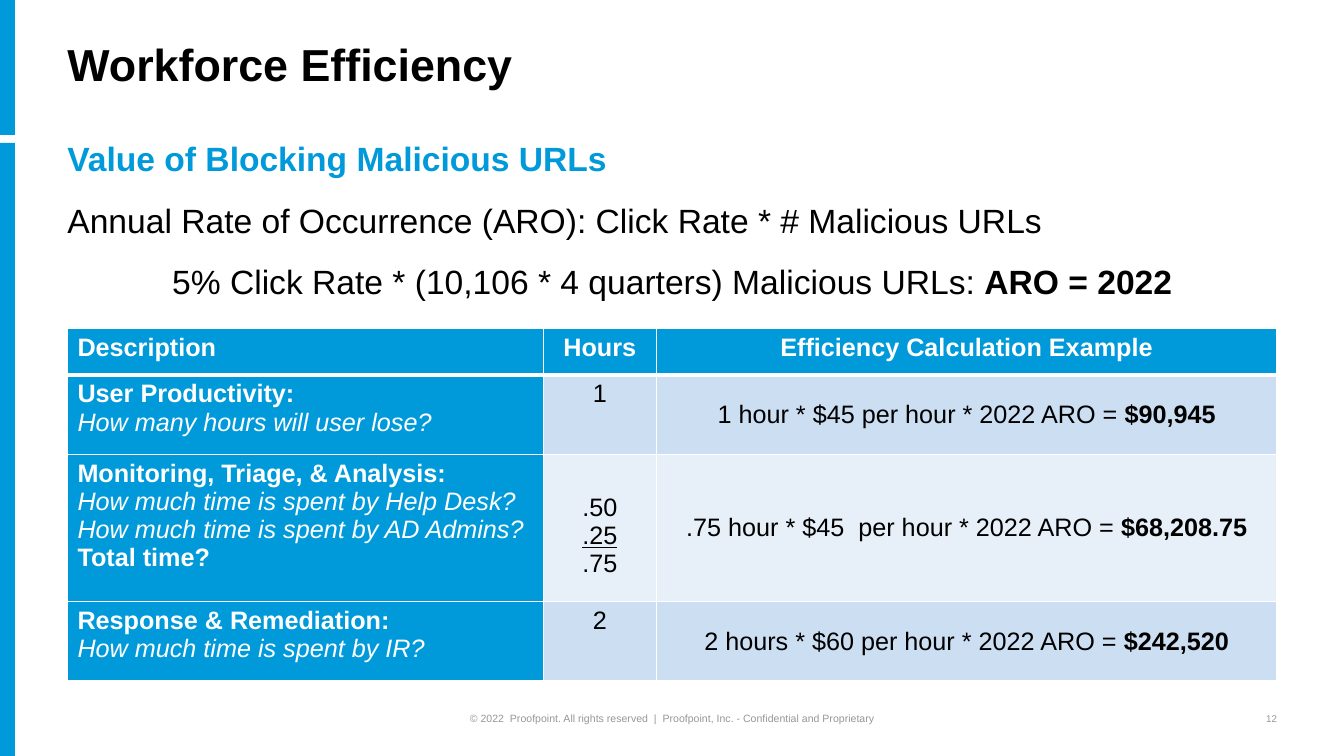
from lxml.etree import SubElement
from pptx import Presentation
from pptx.dml.color import RGBColor
from pptx.enum.shapes import MSO_SHAPE
from pptx.enum.text import MSO_ANCHOR as Anchor, PP_ALIGN as Align
from pptx.oxml.ns import qn
from pptx.util import Cm, Pt

BLUE = RGBColor(0x00, 0x9A, 0xDA)
PALE = RGBColor(0xCC, 0xDE, 0xF1)
PALER = RGBColor(0xE7, 0xEF, 0xF8)
WHITE = RGBColor(0xFF, 0xFF, 0xFF)
BLACK = RGBColor(0x00, 0x00, 0x00)
GREY = RGBColor(0x94, 0x98, 0x96)

FONT = "Arial"
LEFT, WIDTH = 1.7, 30.48
COLUMN_WIDTHS = (11.99, 2.85, 15.64)
ROW_HEIGHTS = (1.17, 2, 3.71, 2)
CELL_TOP = 0.13
HOURS_DROP = 0.86

HEADINGS = ("Description", "Hours", "Efficiency Calculation Example")
TASKS = (
    (("User Productivity:", "How many hours will user lose?"), ("1",),
     "1 hour * $45 per hour * 2022 ARO = ", "$90,945"),
    (("Monitoring, Triage, & Analysis:", "How much time is spent by Help Desk?",
      "How much time is spent by AD Admins?", "Total time?"), (".50", ".25", ".75"),
     ".75 hour * $45  per hour * 2022 ARO = ", "$68,208.75"),
    (("Response & Remediation:", "How much time is spent by IR?"), ("2",),
     "2 hours * $60 per hour * 2022 ARO = ", "$242,520"),
)


def write(frame, text, size=18, color=BLACK, bold=False, italic=False, underline=False,
          align=Align.LEFT, spacing=None, before=None, after=None, bold_end=""):
    first = frame.paragraphs[0]
    paragraph = frame.add_paragraph() if first.runs else first
    paragraph.alignment = align
    paragraph.line_spacing = spacing
    paragraph.space_before = before
    paragraph.space_after = after
    for part, is_bold in ((text, bold), (bold_end, True)):
        if part:
            run = paragraph.add_run()
            run.text = part
            font = run.font
            font.name, font.size, font.bold = FONT, Pt(size), is_bold
            font.italic, font.underline = italic, underline
            font.color.rgb = color


def add_frame(slide, left, top, width, height, anchor=Anchor.MIDDLE):
    frame = slide.shapes.add_textbox(Cm(left), Cm(top), Cm(width), Cm(height)).text_frame
    frame.word_wrap = True
    frame.vertical_anchor = anchor
    frame.margin_left = frame.margin_right = frame.margin_top = frame.margin_bottom = 0
    return frame


def add_side_bar(slide, left, top, width, height):
    gap_top, gap = 3.4, 0.2
    lower_top = gap_top + gap
    for bar_top, bar_height in ((0, gap_top), (lower_top, height - lower_top)):
        shape = slide.shapes.add_shape(MSO_SHAPE.RECTANGLE, Cm(left), Cm(top + bar_top),
                                       Cm(width), Cm(bar_height))
        shape.shadow.inherit = False
        shape.fill.solid()
        shape.fill.fore_color.rgb = BLUE
        shape.line.fill.background()


def add_title(slide, left, top, width, height):
    frame = add_frame(slide, left, top, width, height)
    write(frame, "Workforce Efficiency", size=32, bold=True, spacing=0.9)


def add_body(slide, left, top, width, height):
    frame = add_frame(slide, left, top, width, height, Anchor.TOP)
    line = dict(size=24, spacing=0.9, after=Pt(6))
    write(frame, "Value of Blocking Malicious URLs", color=BLUE, bold=True, **line)
    line["before"] = Pt(12)
    write(frame, "Annual Rate of Occurrence (ARO): Click Rate * # Malicious URLs", **line)
    write(frame, "5% Click Rate * (10,106 * 4 quarters) Malicious URLs: ",
          bold_end="ARO = 2022", align=Align.CENTER, **line)


def style_cell(cell, fill, top_line, bottom_line):
    properties = cell._tc.get_or_add_tcPr()
    for side, points in (("L", 1), ("R", 1), ("T", top_line), ("B", bottom_line)):
        line = SubElement(properties, qn(f"a:ln{side}"), w=str(Pt(points)))
        SubElement(SubElement(line, qn("a:solidFill")), qn("a:srgbClr"), val=str(WHITE))
    cell.fill.solid()
    cell.fill.fore_color.rgb = fill


def add_task_row(table, row, task):
    questions, hours, formula, result = task
    question_cell, hours_cell, example_cell = (table.cell(row, column) for column in range(3))
    for question in questions:
        is_question = question.startswith("How")
        write(question_cell.text_frame, question, color=WHITE,
              bold=not is_question, italic=is_question)
    if len(hours) > 1:
        hours_cell.margin_top = Cm(CELL_TOP + HOURS_DROP)
    for index, value in enumerate(hours):
        write(hours_cell.text_frame, value, align=Align.CENTER,
              underline=index > 0 and index == len(hours) - 2)
    example_cell.vertical_anchor = Anchor.MIDDLE
    write(example_cell.text_frame, formula, bold_end=result, align=Align.CENTER)


def add_efficiency_table(slide, left, top, width, height):
    table = slide.shapes.add_table(len(ROW_HEIGHTS), len(COLUMN_WIDTHS), Cm(left), Cm(top),
                                   Cm(width), Cm(height)).table
    for column, column_width in zip(table.columns, COLUMN_WIDTHS):
        column.width = Cm(column_width)
    for row, row_height in enumerate(ROW_HEIGHTS):
        table.rows[row].height = Cm(row_height)
        band = PALE if row % 2 else PALER
        for column in range(len(COLUMN_WIDTHS)):
            fill = BLUE if row == 0 or column == 0 else band
            style_cell(table.cell(row, column), fill, 3 if row == 1 else 1, 3 if row == 0 else 1)
    for column, heading in enumerate(HEADINGS):
        write(table.cell(0, column).text_frame, heading, color=WHITE, bold=True,
              align=Align.CENTER if column else Align.LEFT)
    for row, task in enumerate(TASKS, start=1):
        add_task_row(table, row, task)


def add_footer(slide, left, top, width, height):
    notice_width, number_width = 12.7, 0.84
    notice = add_frame(slide, left + (width - notice_width) / 2, top, notice_width, height)
    write(notice, "© 2022  Proofpoint. All rights reserved  |  "
          "Proofpoint, Inc. - Confidential and Proprietary",
          size=7.5, color=GREY, align=Align.CENTER)
    number = add_frame(slide, left + width - number_width, top, number_width, height)
    write(number, "12", size=7, color=GREY, align=Align.RIGHT)


def main():
    presentation = Presentation()
    presentation.slide_width, presentation.slide_height = Cm(33.87), Cm(19.05)
    slide = presentation.slides.add_slide(presentation.slide_layouts[6])
    add_side_bar(slide, 0, 0, 0.38, 19.05)
    add_title(slide, LEFT, 0, WIDTH, 3.38)
    add_body(slide, LEFT, 3.6, WIDTH, 4.5)
    add_efficiency_table(slide, LEFT, 8.28, WIDTH, sum(ROW_HEIGHTS))
    add_footer(slide, LEFT, 17.8, WIDTH, 0.61)
    presentation.save("out.pptx")


if __name__ == "__main__":
    main()
